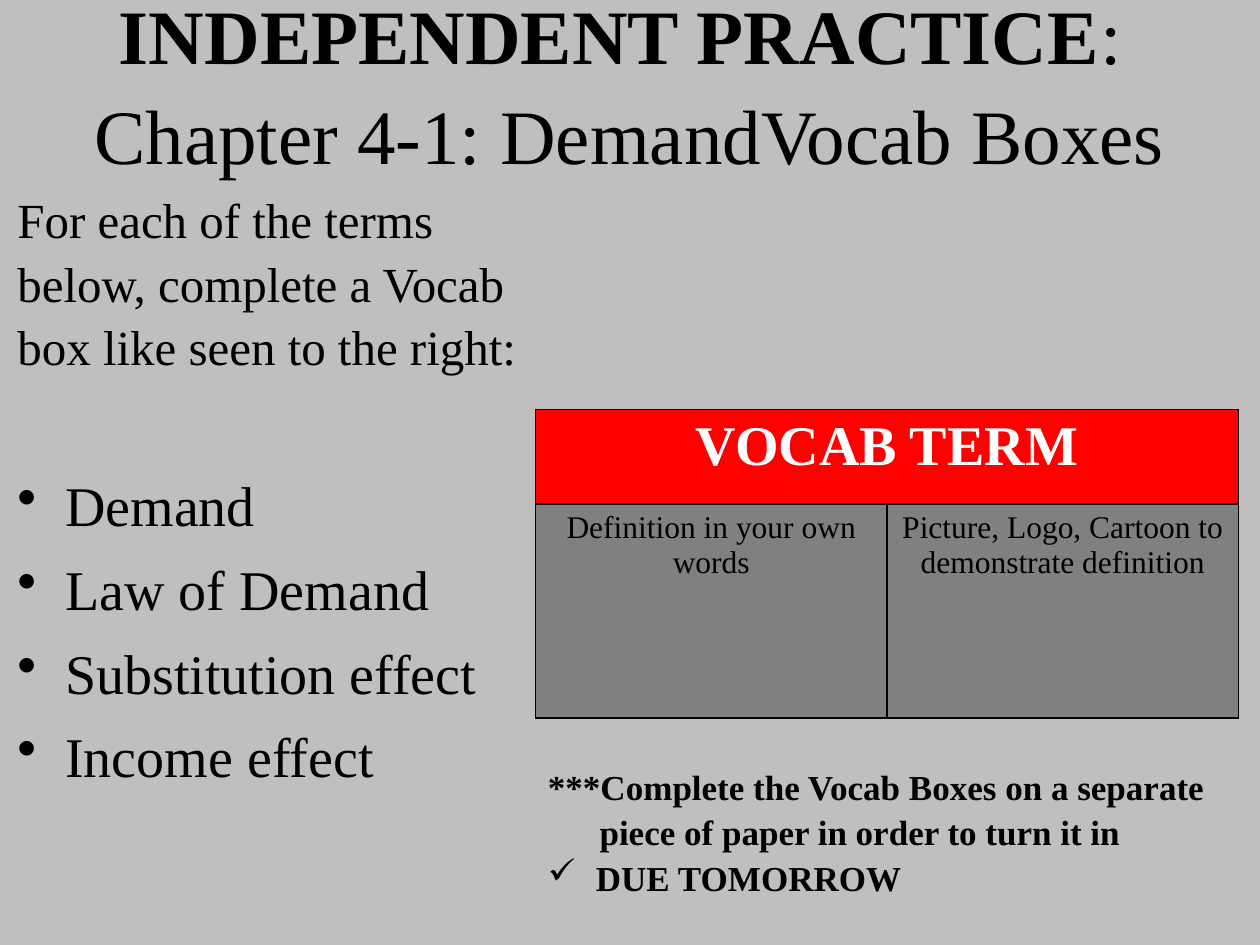
"""Build the vocabulary box independent practice slide."""
import pptx
import pptx.dml.color
import pptx.enum.text
import pptx.oxml.ns
import pptx.util
from lxml import etree

Inches = pptx.util.Inches
Pt = pptx.util.Pt
RGBColor = pptx.dml.color.RGBColor
ALIGN = pptx.enum.text.PP_ALIGN
ANCHOR = pptx.enum.text.MSO_ANCHOR
qn = pptx.oxml.ns.qn

FONT = "Times New Roman"
BLACK = RGBColor(0x00, 0x00, 0x00)
WHITE = RGBColor(0xFF, 0xFF, 0xFF)
RED = RGBColor(0xFF, 0x00, 0x00)
GRAY = RGBColor(0x80, 0x80, 0x80)
LIGHT_GRAY = RGBColor(0xBF, 0xBF, 0xBF)

TERMS = ["Demand", "Law of Demand", "Substitution effect", "Income effect"]


def add_run(p, text, size=18, bold=False, color=BLACK):
    r = p.add_run()
    r.text = text
    r.font.name = FONT
    r.font.size = Pt(size)
    r.font.bold = bold
    r.font.color.rgb = color


def set_indent(p, left, first=0, bullet=None):
    pPr = p._p.get_or_add_pPr()
    pPr.set("marL", str(Inches(left)))
    pPr.set("indent", str(Inches(first)))
    if bullet:
        etree.SubElement(pPr, qn("a:buChar"), char=bullet)


def add_text(tf, text, align=ALIGN.LEFT, before=0, spacing=1.08, left=0,
             bullet=None, **font):
    p = tf.paragraphs[0]
    if p.runs:
        p = tf.add_paragraph()
    p.alignment = align
    p.space_before = Pt(before)
    p.line_spacing = spacing
    set_indent(p, left, -left if bullet else 0, bullet)
    add_run(p, text, **font)
    return p


def add_box(slide, left, top, width, height, anchor=ANCHOR.TOP):
    sp = slide.shapes.add_textbox(Inches(left), Inches(top), Inches(width), Inches(height))
    tf = sp.text_frame
    tf.word_wrap = True
    tf.vertical_anchor = anchor
    return tf


def style_cell(cell, fill):
    tcPr = cell._tc.get_or_add_tcPr()
    for side in ("lnL", "lnR", "lnT", "lnB"):
        ln = etree.SubElement(tcPr, qn("a:" + side), w=str(Pt(1)))
        solid = etree.SubElement(ln, qn("a:solidFill"))
        etree.SubElement(solid, qn("a:srgbClr"), val=str(BLACK))
    cell.fill.solid()
    cell.fill.fore_color.rgb = fill


def add_title(slide):
    tf = add_box(slide, 0, 0.01, 10, 1.25, ANCHOR.MIDDLE)
    p = add_text(tf, "INDEPENDENT PRACTICE", align=ALIGN.CENTER, size=44, bold=True)
    add_run(p, ": ", size=44)
    p.add_line_break()
    add_run(p, "Chapter 4-1: DemandVocab Boxes", size=44)


def add_terms(slide):
    tf = add_box(slide, 0.04, 1.42, 4.17, 4.5)
    add_text(tf, "For each of the terms below, complete a Vocab box like seen to the right:",
             before=5.6, size=28)
    for i, term in enumerate(TERMS):
        add_text(tf, term, before=6.4 if i else 51.2, left=0.38, bullet="•", size=32)


def add_vocab_box(slide):
    frame = slide.shapes.add_table(2, 2, Inches(4.25), Inches(3.25), Inches(5.58), Inches(2.45))
    table = frame.table
    for row, height in zip(table.rows, (0.75, 1.7)):
        row.height = Inches(height)
    for r, fill in enumerate((RED, GRAY)):
        for c in range(2):
            style_cell(table.cell(r, c), fill)
    table.cell(0, 0).merge(table.cell(0, 1))
    centered = {"align": ALIGN.CENTER, "spacing": 1.0}
    add_text(table.cell(0, 0).text_frame, "VOCAB TERM", size=32, bold=True,
             color=WHITE, **centered)
    prompts = ("Definition in your own words", "Picture, Logo, Cartoon to demonstrate definition")
    for c, prompt in enumerate(prompts):
        add_text(table.cell(1, c).text_frame, prompt, **centered)


def add_reminder(slide):
    tf = add_box(slide, 4.25, 6, 5.58, 1.11)
    font = {"size": 20, "bold": True}
    add_text(tf, "***Complete the Vocab Boxes on a separate", **font)
    add_text(tf, "piece of paper in order to turn it in", left=0.41, **font)
    add_text(tf, "DUE TOMORROW", left=0.38, bullet="✓", **font)


def main():
    prs = pptx.Presentation()
    prs.slide_width = Inches(10)
    prs.slide_height = Inches(7.5)
    slide = prs.slides.add_slide(prs.slide_layouts[6])
    slide.background.fill.solid()
    slide.background.fill.fore_color.rgb = LIGHT_GRAY
    add_title(slide)
    add_terms(slide)
    add_vocab_box(slide)
    add_reminder(slide)
    prs.save("out.pptx")


if __name__ == "__main__":
    main()
